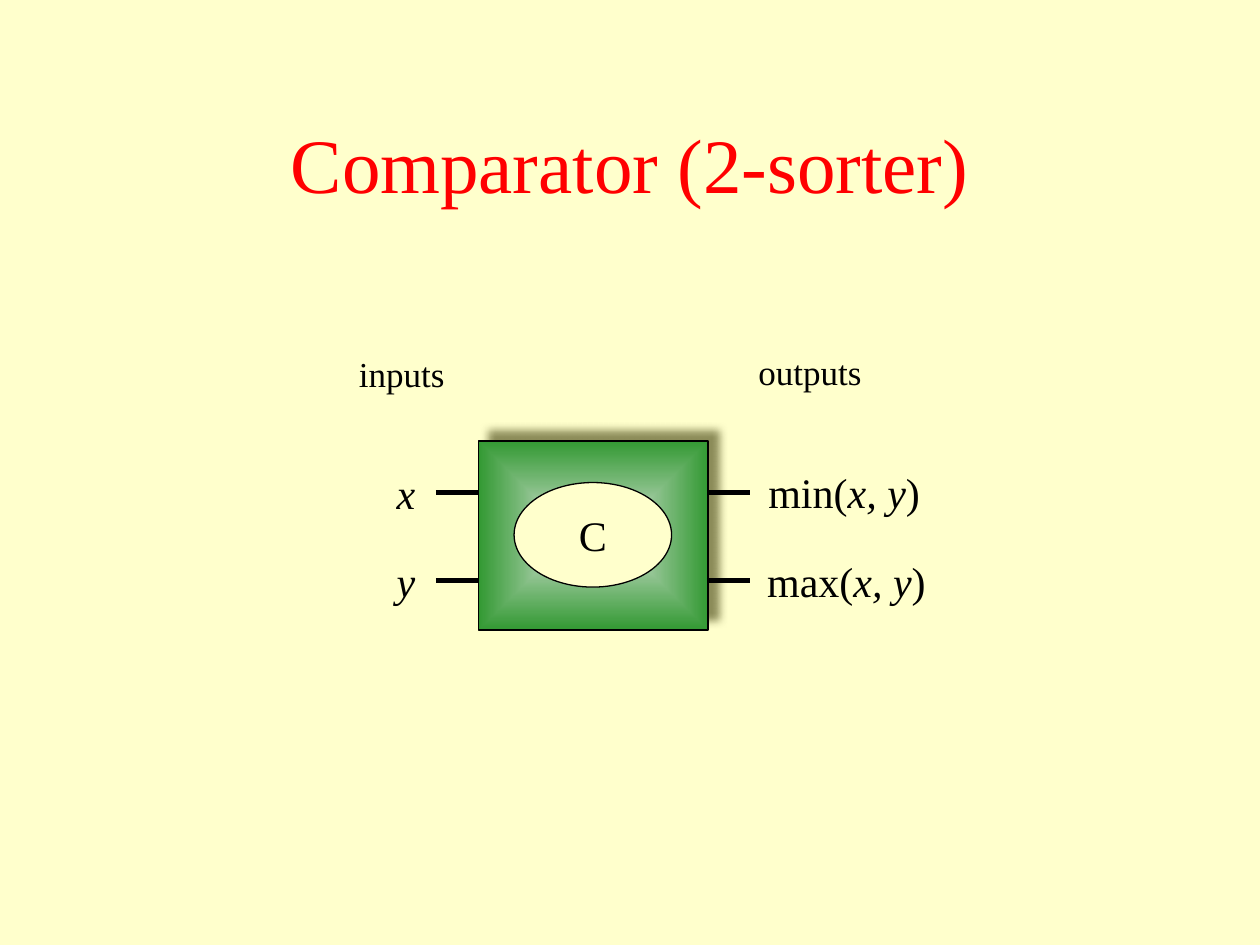
from dataclasses import dataclass

from lxml.etree import SubElement
from pptx import Presentation
from pptx.dml.color import RGBColor
from pptx.enum.shapes import MSO_CONNECTOR, MSO_SHAPE
from pptx.enum.text import MSO_ANCHOR, PP_ALIGN
from pptx.oxml import parse_xml
from pptx.oxml.ns import nsdecls, qn
from pptx.slide import Slide
from pptx.text.text import TextFrame
from pptx.util import Emu, Inches, Pt

COLUMNS, ROWS = 100, 75
WIDTH, HEIGHT = Inches(10), Inches(7.5)


@dataclass(frozen=True)
class Theme:
    font: str = "Times New Roman"
    paper: str = "FFFFCC"
    ink: str = "000000"
    heading: str = "FF0000"
    glow: str = "D6E3D6"
    green: str = "339933"
    shade: str = "666633"
    title_size: int = 44
    symbol_size: int = 24
    caption_size: int = 20
    outline: float = 0.75
    wire: float = 3


@dataclass(frozen=True)
class Area:
    """A rectangle in grid columns and rows."""
    left: float
    top: float
    width: float
    height: float

    def lengths(self) -> tuple[Emu, Emu, Emu, Emu]:
        return across(self.left), down(self.top), across(self.width), down(self.height)


@dataclass(frozen=True)
class Label:
    """Text whose spans alternate between upright and italic."""
    area: Area
    spans: tuple[str, ...]
    size: int


THEME = Theme()
BOX = Area(38, 35, 18.2, 15)
CORE = Area(40.8, 38.3, 12.5, 8.3)
WIRE_LENGTH = 3.4
WIRE_ROWS = (39.1, 46.1)
WIRE_STARTS = (BOX.left - WIRE_LENGTH, BOX.left + BOX.width - 0.1)
LABELS = (
    Label(Area(30.5, 36.6, 3.5, 5), ("", "x"), THEME.symbol_size),
    Label(Area(30.5, 43.6, 3.5, 5), ("", "y"), THEME.symbol_size),
    Label(Area(60, 36.5, 14, 5), ("min(", "x, y", ")"), THEME.symbol_size),
    Label(Area(59.9, 43.6, 14.6, 5), ("max(", "x, y", ")"), THEME.symbol_size),
    Label(Area(27.5, 27.5, 8.8, 4.3), ("inputs",), THEME.caption_size),
    Label(Area(59.2, 27.3, 10.2, 4.3), ("outputs",), THEME.caption_size),
)


def across(columns: float) -> Emu:
    return Emu(round(WIDTH * columns / COLUMNS))


def down(rows: float) -> Emu:
    return Emu(round(HEIGHT * rows / ROWS))


def rgb(color: str) -> RGBColor:
    return RGBColor.from_string(color)


def write(frame: TextFrame, spans: tuple[str, ...], size: int, color: str = THEME.ink,
          align: PP_ALIGN = PP_ALIGN.LEFT, wrap: bool = False) -> None:
    frame.word_wrap = wrap
    para = frame.paragraphs[0]
    para.alignment = align
    for index, text in enumerate(spans):
        if not text:
            continue
        span = para.add_run()
        span.text = text
        formats = {"name": THEME.font, "size": Pt(size), "italic": index % 2 == 1}
        for name, value in formats.items():
            setattr(span.font, name, value)
        span.font.color.rgb = rgb(color)


def add_outlined(page: Slide, kind: MSO_SHAPE, area: Area):
    shape = page.shapes.add_shape(kind, *area.lengths())
    shape.shadow.inherit = False
    shape.line.color.rgb = rgb(THEME.ink)
    shape.line.width = Pt(THEME.outline)
    return shape


def add_box(page: Slide) -> None:
    box = add_outlined(page, MSO_SHAPE.RECTANGLE, BOX)
    # Gradient from the centre to the edges
    box.fill.gradient()
    for stop, color, position in zip(box.fill.gradient_stops, (THEME.glow, THEME.green), (0, 1)):
        stop.color.rgb = rgb(color)
        stop.position = position
    properties = box._element.spPr
    linear = properties.find(".//" + qn("a:lin"))
    linear.getparent().replace(linear, parse_xml(
        f'<a:path {nsdecls("a")} path="shape">'
        '<a:fillToRect l="50000" t="50000" r="50000" b="50000"/></a:path>'))
    # Soft shadow up and to the right
    shadow = SubElement(properties.find(qn("a:effectLst")), qn("a:outerShdw"), {
        "blurRad": str(Pt(5)), "dist": str(Pt(8.5)), "dir": str(315 * 60000),
        "algn": "ctr", "rotWithShape": "0"})
    color = SubElement(shadow, qn("a:srgbClr"), val=THEME.shade)
    SubElement(color, qn("a:alpha"), val="75000")


def add_wire(page: Slide, left: float, row: float) -> None:
    wire = page.shapes.add_connector(MSO_CONNECTOR.STRAIGHT, across(left), down(row),
                                     across(left + WIRE_LENGTH), down(row))
    wire.line.color.rgb = rgb(THEME.ink)
    wire.line.width = Pt(THEME.wire)
    SubElement(wire._element.spPr, qn("a:effectLst"))


def add_label(page: Slide, label: Label) -> None:
    box = page.shapes.add_textbox(*label.area.lengths())
    write(box.text_frame, label.spans, label.size)


def add_core(page: Slide) -> None:
    core = add_outlined(page, MSO_SHAPE.OVAL, CORE)
    core.fill.solid()
    core.fill.fore_color.rgb = rgb(THEME.paper)
    core.text_frame.vertical_anchor = MSO_ANCHOR.MIDDLE
    write(core.text_frame, ("C",), THEME.symbol_size, align=PP_ALIGN.CENTER)


def add_title(page: Slide) -> None:
    title = page.shapes.title
    area = Area(7.5, 6.7, 85, 12.5)
    for name, value in zip(("left", "top", "width", "height"), area.lengths()):
        setattr(title, name, value)
    title.text_frame.vertical_anchor = MSO_ANCHOR.MIDDLE
    write(title.text_frame, ("Comparator (2-sorter)",), THEME.title_size,
          THEME.heading, PP_ALIGN.CENTER, wrap=True)


def main() -> None:
    deck = Presentation()
    deck.slide_width, deck.slide_height = WIDTH, HEIGHT
    page = deck.slides.add_slide(deck.slide_layouts[5])
    page.background.fill.solid()
    page.background.fill.fore_color.rgb = rgb(THEME.paper)

    add_title(page)
    # Comparator with two wires on each side
    add_box(page)
    for left in WIRE_STARTS:
        for row in WIRE_ROWS:
            add_wire(page, left, row)
    for label in LABELS:
        add_label(page, label)
    add_core(page)
    deck.save("out.pptx")


if __name__ == "__main__":
    main()
